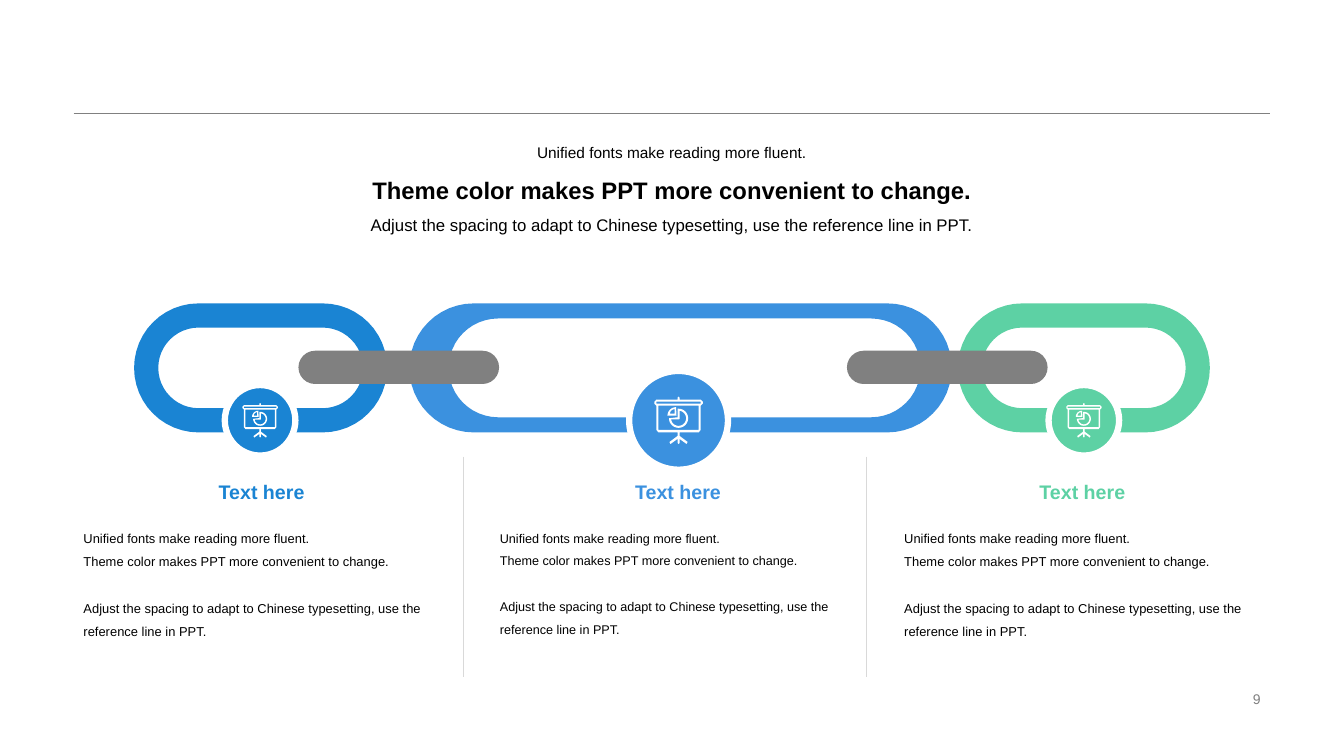
from math import cos, radians, sin

from lxml import etree
from pptx import Presentation
from pptx import util as u
from pptx.dml.color import RGBColor
from pptx.enum import shapes, text
from pptx.oxml.ns import qn

LINES = (
    "Unified fonts make reading more fluent.",
    "Theme color makes PPT more convenient to change.",
    "Adjust the spacing to adapt to Chinese typesetting, use the reference line in PPT.",
)
GRAY = "808080"
ICON_WIDTH, ICON_HEIGHT = 48, 47


def color(value):
    """Turn a hex string into a colour."""
    return RGBColor.from_string(value)


def add_text(page, box, lines, sizes, bolds=(False,), ink="000000", spacing=1.0,
             align=text.PP_ALIGN.LEFT, anchor=text.MSO_ANCHOR.TOP, wrap=True, last_gap=0):
    """Write one paragraph per line into a text box."""
    frame = page.shapes.add_textbox(*map(u.Inches, box)).text_frame
    frame.word_wrap = wrap
    frame.vertical_anchor = anchor
    for index, line in enumerate(lines):
        para = frame.add_paragraph() if index else frame.paragraphs[0]
        para.alignment = align
        para.line_spacing = spacing
        if last_gap and index == len(lines) - 1:
            para.space_before = u.Pt(last_gap)
        span = para.add_run()
        span.text = line
        span.font.name = "Arial"
        span.font.size = u.Pt(sizes[index % len(sizes)])
        span.font.bold = bolds[index % len(bolds)]
        span.font.color.rgb = color(ink)


def add_rule(page, start, end, ink):
    """Draw a hairline between two points."""
    rule = page.shapes.add_connector(
        shapes.MSO_CONNECTOR.STRAIGHT, *map(u.Inches, start + end))
    rule.line.color.rgb = color(ink)
    rule.line.width = u.Pt(0.25)
    etree.SubElement(rule._element.spPr, qn("a:effectLst"))


def paint(shape, fill):
    """Give a shape a flat fill without line or shadow."""
    shape.shadow.inherit = False
    shape.fill.solid()
    shape.fill.fore_color.rgb = color(fill)
    shape.line.fill.background()


def arc(x, y, radius, start, end, steps=24):
    """List points along a clockwise arc given in degrees."""
    angles = [radians(start + (end - start) * step / steps) for step in range(steps + 1)]
    return [(x + radius * cos(angle), y + radius * sin(angle)) for angle in angles]


def rectangle(left, top, right, bottom):
    """List the corners of a rectangle."""
    return [(left, top), (right, top), (right, bottom), (left, bottom)]


def stadium(left, top, width, height):
    """List the outline of a box with fully round ends."""
    radius = height / 2
    middle = top + radius
    return (arc(left + width - radius, middle, radius, -90, 90)
            + arc(left + radius, middle, radius, 90, 270))


def add_outline(page, contours, fill):
    """Fill closed contours as a single freeform."""
    scaled = [[(u.Inches(x), u.Inches(y)) for x, y in contour] for contour in contours]
    builder = page.shapes.build_freeform(*scaled[0][0])
    for index, contour in enumerate(scaled):
        if index:
            builder.move_to(*contour[0])
        builder.add_line_segments(contour[1:], close=True)
    paint(builder.convert_to_shape(), fill)


def add_link(page, box, insets, fill):
    """Draw a chain link with a hole set in by left, vertical and right insets."""
    left, top, width, height = box
    before, edge, after = insets
    hole = stadium(left + before, top + edge, width - before - after, height - 2 * edge)
    add_outline(page, [stadium(*box), hole], fill)


def add_bar(page, box):
    """Draw a round-ended bar that joins two links."""
    bar = page.shapes.add_shape(
        shapes.MSO_SHAPE.ROUNDED_RECTANGLE, *map(u.Inches, box))
    bar.adjustments[0] = 0.5
    paint(bar, GRAY)


def board_contours():
    """List the presentation board outlines on a 48 by 47 grid."""
    half = [(25, 1), (25, 3), (46, 3), (48, 5), (48, 7), (46, 9), (46, 33), (44, 35.5),
            (25, 35.5), (25, 39), (33, 45), (32, 47), (25, 42), (25, 46)]
    mirrored = [(ICON_WIDTH - x, y) for x, y in reversed(half)]
    return [
        [(24, 0)] + half + [(24, 47)] + mirrored,
        rectangle(2, 5, 46, 7),
        rectangle(4, 9, 44, 33),
        arc(21.5, 19, 8.5, 180, 270) + [(22, 19)],
        arc(20, 17, 4.5, 180, 270) + [(20, 17)],
        arc(24, 21.5, 9.5, -90, 180) + [(23, 20.5), (23, 12)],
        arc(24, 21.5, 7.5, -82, 171) + [(24.5, 22.5), (25, 22)],
    ]


def add_badge(page, box, icon_width, fill):
    """Draw a white-ringed circle with a board icon at its centre."""
    left, top, width, height = box
    circle = page.shapes.add_shape(shapes.MSO_SHAPE.OVAL, *map(u.Inches, box))
    paint(circle, fill)
    circle.line.color.rgb = color("FFFFFF")
    circle.line.width = u.Pt(4.5)
    unit = icon_width / ICON_WIDTH
    icon_left = left + (width - icon_width) / 2
    icon_top = top + (height - ICON_HEIGHT * unit) / 2
    add_outline(page, [[(icon_left + x * unit, icon_top + y * unit) for x, y in contour]
                       for contour in board_contours()], "FFFFFF")


def add_column(page, box, size, ink):
    """Write a coloured heading with its body text below."""
    left, top, width, height = box
    heading = 0.52
    add_text(page, (left, top, width, heading), ["Text here"], [14], [True], ink,
             align=text.PP_ALIGN.CENTER, anchor=text.MSO_ANCHOR.MIDDLE, wrap=False)
    add_text(page, (left, top + heading, width, height - heading), LINES, [size],
             spacing=1.5, last_gap=size * 1.8)


def add_header(page, box):
    """Draw the top rule and the centred introduction."""
    left, top, width, height = box
    add_rule(page, (left, top), (left + width, top), GRAY)
    add_text(page, (left, top + 0.16, width, height - 0.16), LINES, [11, 17, 12],
             [False, True, False], spacing=1.5, align=text.PP_ALIGN.CENTER)


def add_chain(page, top):
    """Draw links, joining bars, columns, dividers and badges."""
    height = 1.28
    side, wide = (0.24, 0.24, 0.24), (0.39, 0.15, 0.31)
    parts = [
        (1.33, 2.51, side, 0.73, 9.2, 2.58, 0.7, 0.35, "1A84D3"),
        (4.06, 5.38, wide, 4.86, 9, 6.73, 0.98, 0.48, "3B91DF"),
        (9.5, 2.5, side, 8.87, 9.2, 10.75, 0.7, 0.35, "5DD1A4"),
    ]
    for left, width, insets, column, size, center, badge, icon, ink in parts:
        add_link(page, (left, top, width, height), insets, ink)
        add_column(page, (column, top + 1.61, 3.73, 1.76), size, ink)
        add_badge(page, (center - badge / 2, top + 1.16 - badge / 2, badge, badge), icon, ink)
    for left, divider in ((2.96, 4.59), (8.4, 8.59)):
        add_bar(page, (left, top + 0.47, 1.99, 0.33))
        add_rule(page, (divider, top + 1.52), (divider, top + 3.71), "D9D9D9")


def main():
    """Build and save the slide."""
    deck = Presentation()
    deck.slide_width, deck.slide_height = u.Inches(13.33), u.Inches(7.5)
    page = deck.slides.add_slide(deck.slide_layouts[6])
    add_header(page, (0.73, 1.12, 11.87, 1.42))
    add_chain(page, 3.01)
    add_text(page, (9.42, 6.82, 3.18, 0.23), ["9"], [10], ink=GRAY,
             align=text.PP_ALIGN.RIGHT, anchor=text.MSO_ANCHOR.MIDDLE)
    deck.save("out.pptx")


if __name__ == "__main__":
    main()
